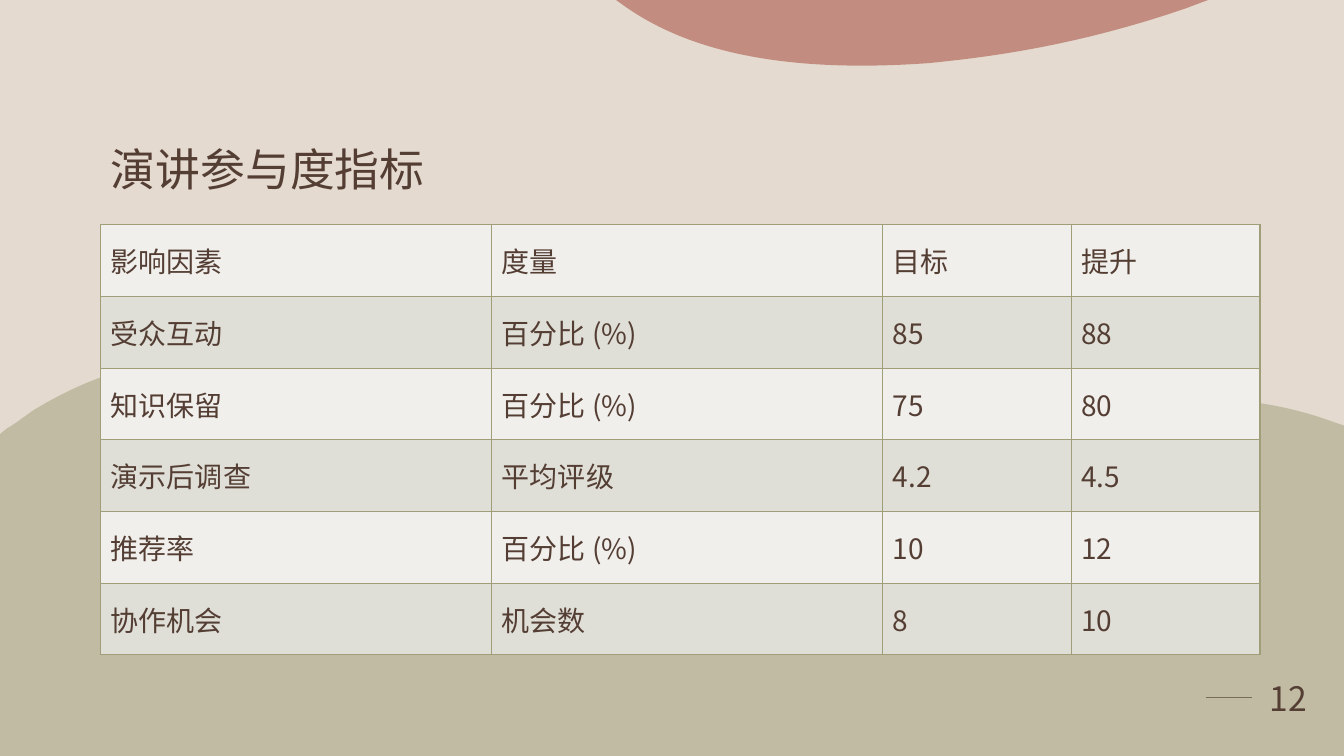
from dataclasses import dataclass

from lxml.etree import SubElement
from pptx import Presentation
from pptx.dml.color import RGBColor
from pptx.enum.shapes import MSO_CONNECTOR
from pptx.enum.text import MSO_ANCHOR as Anchor, PP_ALIGN as Align
from pptx.oxml.ns import qn
from pptx.util import Pt

TITLE = "演讲参与度指标"
PAGE_NUMBER = "12"
METRICS = [
    ("影响因素", "度量", "目标", "提升"),
    ("受众互动", "百分比 (%)", "85", "88"),
    ("知识保留", "百分比 (%)", "75", "80"),
    ("演示后调查", "平均评级", "4.2", "4.5"),
    ("推荐率", "百分比 (%)", "10", "12"),
    ("协作机会", "机会数", "8", "10"),
]

# Outlines in points: each part is a line end, or two handles and a curve end.
HILL = [
    [(145, 258)],
    [(170, 258), (194, 264), (219, 273)],
    [(240, 281), (259, 294), (278, 306)],
    [(319, 333), (364, 353), (415, 360)],
    [(459, 366), (503, 362), (546, 351)],
    [(595, 340), (624, 329), (654, 319)],
    [(683, 309), (836, 257), (954, 302)],
    [(960, 304)], [(960, 540)], [(0, 540)], [(0, 310)], [(5, 306)],
    [(12, 302), (18, 297), (24, 293)],
    [(65, 268), (105, 256), (145, 258)],
]
CLOUD = [
    [(440, 0)], [(863, 0)], [(847, 6)],
    [(760, 36), (692, 42), (665, 45)],
    [(544, 54), (483, 30), (447, 5)],
]
HILL_HEIGHT, CLOUD_HEIGHT = 282, 47


@dataclass(frozen=True)
class Theme:
    font: str = "Noto Sans CJK SC"
    text: str = "543E34"
    background: str = "E5DACF"
    olive: str = "A09D79"
    clay: str = "AC5B4C"
    bands: tuple = ("F0EFEC", "DFDFD7")
    title_size: int = 32
    cell_size: int = 20
    number_size: int = 24


THEME = Theme()
WIDTH, HEIGHT = 960, 540
TABLE_LEFT, TABLE_TOP, ROW_HEIGHT = 72, 160.6, 51.2
COLUMNS = (279.3, 279.3, 134.7, 134.7)
RULE_LEFT, RULE_Y, NUMBER_LEFT = 861.1, 498.2, 894.2


def rgb(value):
    return RGBColor.from_string(value)


def fill_solid(target, color):
    target.fill.solid()
    target.fill.fore_color.rgb = rgb(color)


def write(tf, text, size, anchor=Anchor.MIDDLE, align=None):
    """Put one paragraph in the frame, with the font set for Latin and Chinese."""
    tf.word_wrap = True
    tf.vertical_anchor = anchor
    p = tf.paragraphs[0]
    p.text = text
    p.alignment = align
    p.font.size = Pt(size)
    p.font.bold = False
    p.font.color.rgb = rgb(THEME.text)
    p.font.name = THEME.font
    SubElement(p.font._element, qn("a:ea"), typeface=THEME.font)
    return p


def add_blob(slide, outline, height, color, opacity):
    """Build the outline from its end points, then bend the curved parts."""
    ends = [part[-1] for part in outline]
    left, top = (min(values) for values in zip(*ends))
    builder = slide.shapes.build_freeform(*ends[0], scale=Pt(1))
    builder.add_line_segments(ends[1:], close=True)
    sp = builder.convert_to_shape()
    sp.height = Pt(height)
    path_xml = next(sp._element.iter(qn("a:path")))
    path_xml.set("h", str(height))
    for segment, part in zip(list(path_xml), outline):
        if len(part) == 3:
            curve = path_xml.makeelement(qn("a:cubicBezTo"))
            for x, y in part:
                SubElement(curve, qn("a:pt"), x=str(x - left), y=str(y - top))
            path_xml.replace(segment, curve)

    sp.shadow.inherit = False
    sp.line.fill.background()
    fill_solid(sp, color)
    color_xml = sp._element.spPr.find(qn("a:solidFill"))[0]
    SubElement(color_xml, qn("a:alpha"), val=str(opacity * 1000))


def add_borders(cell):
    tc_pr = cell._tc.get_or_add_tcPr()
    for side in ("lnL", "lnR", "lnT", "lnB"):
        ln = SubElement(tc_pr, qn(f"a:{side}"), w=str(Pt(1)))
        SubElement(SubElement(ln, qn("a:solidFill")), qn("a:srgbClr"), val=THEME.olive)


def add_metrics(slide):
    table = slide.shapes.add_table(
        len(METRICS), len(COLUMNS), Pt(TABLE_LEFT), Pt(TABLE_TOP),
        Pt(sum(COLUMNS)), Pt(ROW_HEIGHT * len(METRICS))).table
    table.first_row = table.horz_banding = False
    for column, width in zip(table.columns, COLUMNS):
        column.width = Pt(width)
    for i, values in enumerate(METRICS):
        table.rows[i].height = Pt(ROW_HEIGHT)
        for j, value in enumerate(values):
            cell = table.cell(i, j)
            write(cell.text_frame, value, THEME.cell_size)
            cell.vertical_anchor = Anchor.MIDDLE
            add_borders(cell)
            fill_solid(cell, THEME.bands[i % 2])


def add_rule(slide):
    rule = slide.shapes.add_connector(
        MSO_CONNECTOR.STRAIGHT, Pt(RULE_LEFT), Pt(RULE_Y), Pt(NUMBER_LEFT), Pt(RULE_Y))
    rule.line.color.rgb = rgb(THEME.text)
    rule.line.width = Pt(1.25)
    SubElement(rule._element.spPr, qn("a:effectLst"))


def add_title(slide):
    title = slide.shapes.title
    title.left, title.top, title.width, title.height = Pt(72), Pt(72), Pt(816), Pt(72)
    p = write(title.text_frame, TITLE, THEME.title_size, Anchor.BOTTOM, Align.LEFT)
    p.line_spacing = 0.9
    slide.shapes._spTree.append(title._element)


def add_page_number(slide):
    box = slide.shapes.add_textbox(Pt(NUMBER_LEFT), Pt(463), Pt(51.8), Pt(70.6))
    write(box.text_frame, PAGE_NUMBER, THEME.number_size, align=Align.CENTER)


def main():
    prs = Presentation()
    prs.slide_width, prs.slide_height = Pt(WIDTH), Pt(HEIGHT)
    slide = prs.slides.add_slide(prs.slide_layouts[5])
    fill_solid(slide.background, THEME.background)
    add_rule(slide)
    add_blob(slide, HILL, HILL_HEIGHT, THEME.olive, 50)
    add_blob(slide, CLOUD, CLOUD_HEIGHT, THEME.clay, 60)
    add_title(slide)
    add_metrics(slide)
    add_page_number(slide)
    prs.save("out.pptx")


if __name__ == "__main__":
    main()
